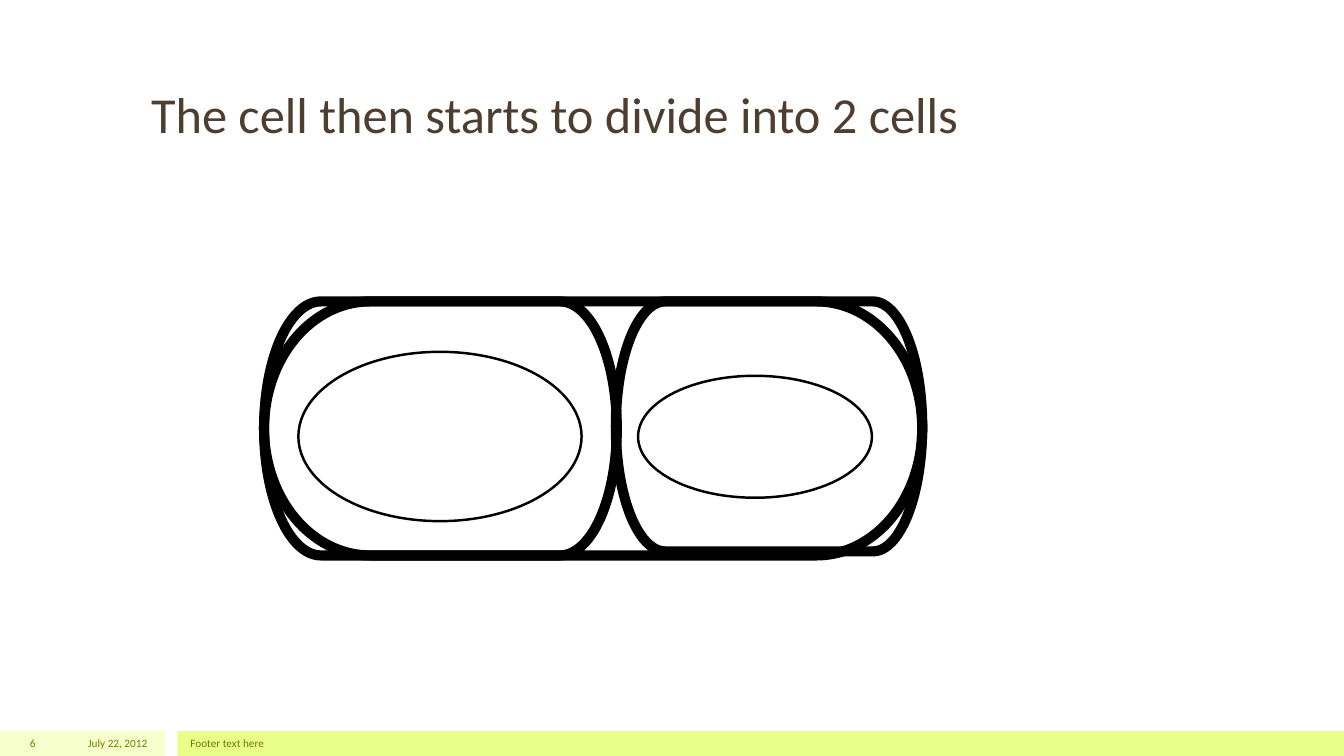
from dataclasses import dataclass

from pptx import Presentation
from pptx.dml.color import RGBColor
from pptx.enum.shapes import MSO_SHAPE as Preset
from pptx.enum.text import MSO_ANCHOR as Anchor, PP_ALIGN as Align
from pptx.slide import Slide
from pptx.util import Pt


@dataclass(frozen=True)
class Theme:
    font: str = "Calibri"
    title_size: float = 36
    footer_size: float = 8
    title_color: str = "4D3E2F"
    footer_color: str = "688000"
    pale_lime: str = "F6FFCC"
    lime: str = "E9FF88"
    outline: str = "000000"
    membrane_width: float = 7.25
    nucleus_width: float = 1.75


@dataclass(frozen=True)
class Box:
    left: float
    top: float
    width: float
    height: float

    def lengths(self) -> tuple[Pt, Pt, Pt, Pt]:
        return Pt(self.left), Pt(self.top), Pt(self.width), Pt(self.height)


@dataclass(frozen=True)
class Band:
    box: Box
    color: str


@dataclass(frozen=True)
class Outline:
    box: Box
    preset: Preset
    width: float


@dataclass(frozen=True)
class Label:
    box: Box
    text: str
    size: float
    color: str
    align: Align = Align.LEFT
    anchor: Anchor = Anchor.MIDDLE


THEME = Theme()
FOOTER_TOP, FOOTER_HEIGHT = 522, 18
CELL_LEFT, CELL_TOP, CELL_WIDTH, CELL_HEIGHT = 188.64, 215.28, 470.16, 181.44
RIGHT_CELL_WIDTH = 218.88


def footer_box(left: float, width: float) -> Box:
    return Box(left, FOOTER_TOP, width, FOOTER_HEIGHT)


def footer_label(left: float, width: float, text: str, align: Align) -> Label:
    return Label(footer_box(left, width), text, THEME.footer_size, THEME.footer_color, align)


def membrane(left: float, width: float, height: float = CELL_HEIGHT) -> Outline:
    return Outline(Box(left, CELL_TOP, width, height), Preset.FLOWCHART_TERMINATOR, THEME.membrane_width)


def nucleus(box: Box) -> Outline:
    return Outline(box, Preset.OVAL, THEME.nucleus_width)


BANDS = [
    Band(footer_box(0, 118.08), THEME.pale_lime),
    Band(footer_box(126.72, 833.28), THEME.lime),
]
OUTLINES = [
    membrane(CELL_LEFT, CELL_WIDTH),
    nucleus(Box(213.12, 251.28, 202.32, 120.96)),
    nucleus(Box(455.76, 268.4, 167.04, 87.12)),
    membrane(CELL_LEFT + CELL_WIDTH - RIGHT_CELL_WIDTH, RIGHT_CELL_WIDTH, 178.56),
    membrane(CELL_LEFT, 252),
]
LABELS = [
    footer_label(33.84, 78.48, "July 22, 2012", Align.RIGHT),
    footer_label(128.88, 720, "Footer text here", Align.LEFT),
    footer_label(0, 32.4, "6", Align.RIGHT),
    Label(
        Box(100.8, 56.16, 683.28, 51.12),
        "The cell then starts to divide into 2 cells",
        THEME.title_size,
        THEME.title_color,
        anchor=Anchor.TOP,
    ),
]


def draw_band(slide: Slide, band: Band) -> None:
    shape = slide.shapes.add_shape(Preset.RECTANGLE, *band.box.lengths())
    shape.shadow.inherit = False
    shape.fill.solid()
    shape.fill.fore_color.rgb = RGBColor.from_string(band.color)
    shape.line.fill.background()


def draw_outline(slide: Slide, outline: Outline) -> None:
    shape = slide.shapes.add_shape(outline.preset, *outline.box.lengths())
    shape.shadow.inherit = False
    shape.fill.background()
    shape.line.color.rgb = RGBColor.from_string(THEME.outline)
    shape.line.width = Pt(outline.width)


def draw_label(slide: Slide, label: Label) -> None:
    frame = slide.shapes.add_textbox(*label.box.lengths()).text_frame
    frame.word_wrap = True
    frame.vertical_anchor = label.anchor
    paragraph = frame.paragraphs[0]
    paragraph.text = label.text
    paragraph.alignment = label.align
    paragraph.font.name = THEME.font
    paragraph.font.size = Pt(label.size)
    paragraph.font.color.rgb = RGBColor.from_string(label.color)


def main() -> None:
    presentation = Presentation()
    presentation.slide_width = Pt(960)
    presentation.slide_height = Pt(540)
    slide = presentation.slides.add_slide(presentation.slide_layouts[6])
    for band in BANDS:
        draw_band(slide, band)
    for outline in OUTLINES:
        draw_outline(slide, outline)
    for label in LABELS:
        draw_label(slide, label)
    presentation.save("out.pptx")


if __name__ == "__main__":
    main()
